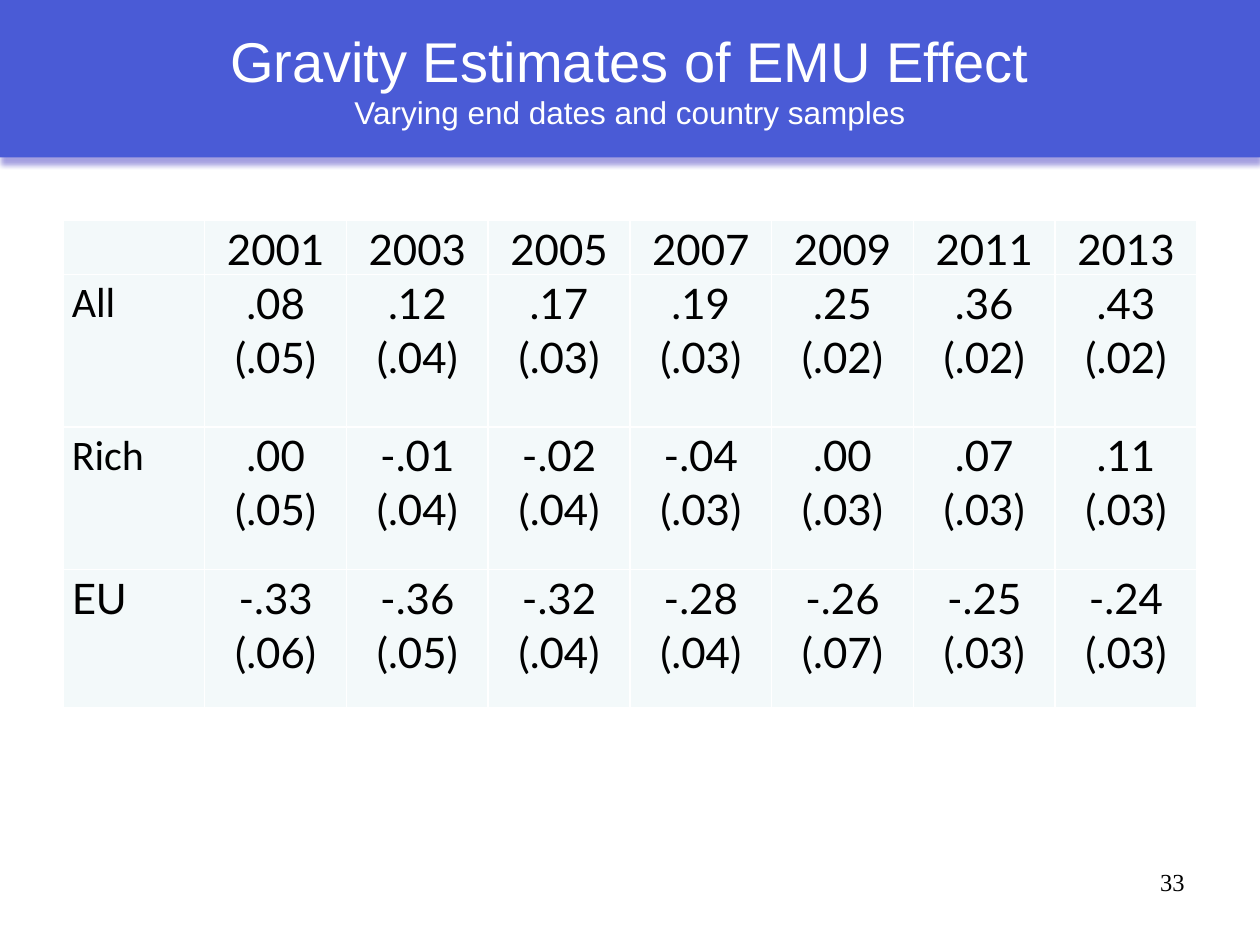
from lxml.etree import SubElement
from pptx import Presentation
from pptx.dml.color import RGBColor
from pptx.enum.text import MSO_ANCHOR, PP_ALIGN
from pptx.oxml import parse_xml
from pptx.oxml.ns import nsdecls, qn
from pptx.util import Inches, Pt

YEARS = ["2001", "2003", "2005", "2007", "2009", "2011", "2013"]
ESTIMATES = {
    "All": [".08 (.05)", ".12 (.04)", ".17 (.03)", ".19 (.03)",
            ".25 (.02)", ".36 (.02)", ".43 (.02)"],
    "Rich": [".00 (.05)", "-.01 (.04)", "-.02 (.04)", "-.04 (.03)",
             ".00 (.03)", ".07 (.03)", ".11 (.03)"],
    "EU": ["-.33 (.06)", "-.36 (.05)", "-.32 (.04)", "-.28 (.04)",
           "-.26 (.07)", "-.25 (.03)", "-.24 (.03)"],
}
LABEL_FONTS = {"All": "Calibri", "Rich": "Calibri", "EU": "Lato"}
ROW_HEIGHTS = [0.42, 1.21, 1.13, 1.1]


def rgb(value):
    return RGBColor.from_string(value)


def set_all(obj, values):
    for name, value in values.items():
        setattr(obj, name, value)


class SlideBuilder:
    band = "4A5BD6"
    shade = "A5A0E0"
    cell_fill = "F3F9FA"
    white = "FFFFFF"
    black = "000000"
    cell_format = {"margin_left": Inches(0.07), "margin_right": Inches(0.07),
                   "margin_top": 0, "margin_bottom": 0,
                   "vertical_anchor": MSO_ANCHOR.TOP}

    def __init__(self, prs):
        self.s = prs.slides.add_slide(prs.slide_layouts[5])

    def place(self, sp, left, top, width, height):
        set_all(sp, {"left": Inches(left), "top": Inches(top),
                     "width": Inches(width), "height": Inches(height)})

    def run(self, p, text, font, size, color):
        r = p.add_run()
        r.text = text
        set_all(r.font, {"name": font, "size": Pt(size), "bold": False, "italic": False})
        r.font.color.rgb = rgb(color)

    def title(self, heading, subheading):
        sp = self.s.shapes.title
        self.place(sp, 0, 0, 10, 1.25)
        sp.fill.solid()
        sp.fill.fore_color.rgb = rgb(self.band)
        sp.line.fill.background()
        sp._element.spPr.append(parse_xml(
            f'<a:effectLst {nsdecls("a")}><a:outerShdw blurRad="38100" dist="50800" '
            f'dir="5400000" algn="t" rotWithShape="0"><a:srgbClr val="{self.shade}"/>'
            '</a:outerShdw></a:effectLst>'))
        tf = sp.text_frame
        set_all(tf, {"word_wrap": True, "vertical_anchor": MSO_ANCHOR.MIDDLE})
        p = tf.paragraphs[0]
        p.alignment = PP_ALIGN.CENTER
        self.run(p, heading, "Arial", 32, self.white)
        p.add_line_break()
        self.run(p, subheading, "Arial", 18, self.white)

    def borders(self, cell):
        tcPr = cell._tc.get_or_add_tcPr()
        for i, side in enumerate(("lnL", "lnR", "lnT", "lnB")):
            ln = tcPr.makeelement(qn(f"a:{side}"), {"w": str(Pt(1))})
            fill = SubElement(ln, qn("a:solidFill"))
            SubElement(fill, qn("a:srgbClr"), val=self.white)
            tcPr.insert(i, ln)

    def cell(self, cell, lines, font, align):
        set_all(cell, self.cell_format)
        cell.fill.solid()
        cell.fill.fore_color.rgb = rgb(self.cell_fill)
        self.borders(cell)
        tf = cell.text_frame
        for i, line in enumerate(lines):
            p = tf.add_paragraph() if i else tf.paragraphs[0]
            set_all(p, {"alignment": align, "line_spacing": 1.07})
            self.run(p, line, font, 24, self.black)

    def table(self, years, estimates, left, top, width):
        rows = [("", years), *estimates.items()]
        tbl = self.s.shapes.add_table(
            len(rows), len(years) + 1, Inches(left), Inches(top),
            Inches(width), Inches(sum(ROW_HEIGHTS))).table
        set_all(tbl, {"first_row": False, "horz_banding": False})
        for i, (label, values) in enumerate(rows):
            tbl.rows[i].height = Inches(ROW_HEIGHTS[i])
            self.cell(tbl.cell(i, 0), label.split(), LABEL_FONTS.get(label), PP_ALIGN.LEFT)
            for j, value in enumerate(values, 1):
                self.cell(tbl.cell(i, j), value.split(), "Lato", PP_ALIGN.CENTER)

    def page_number(self, text, left, top, width, height):
        sp = self.s.shapes.add_textbox(
            Inches(left), Inches(top), Inches(width), Inches(height))
        tf = sp.text_frame
        tf.word_wrap = True
        p = tf.paragraphs[0]
        p.alignment = PP_ALIGN.RIGHT
        self.run(p, text, "Times New Roman", 14, self.black)


def main():
    prs = Presentation()
    set_all(prs, {"slide_width": Inches(10), "slide_height": Inches(7.5)})
    builder = SlideBuilder(prs)
    builder.title("Gravity Estimates of EMU Effect",
                  "Varying end dates and country samples")
    builder.table(YEARS, ESTIMATES, 0.5, 1.75, 9)
    builder.page_number("33", 7.17, 6.83, 2.33, 0.52)
    prs.save("out.pptx")


if __name__ == "__main__":
    main()
